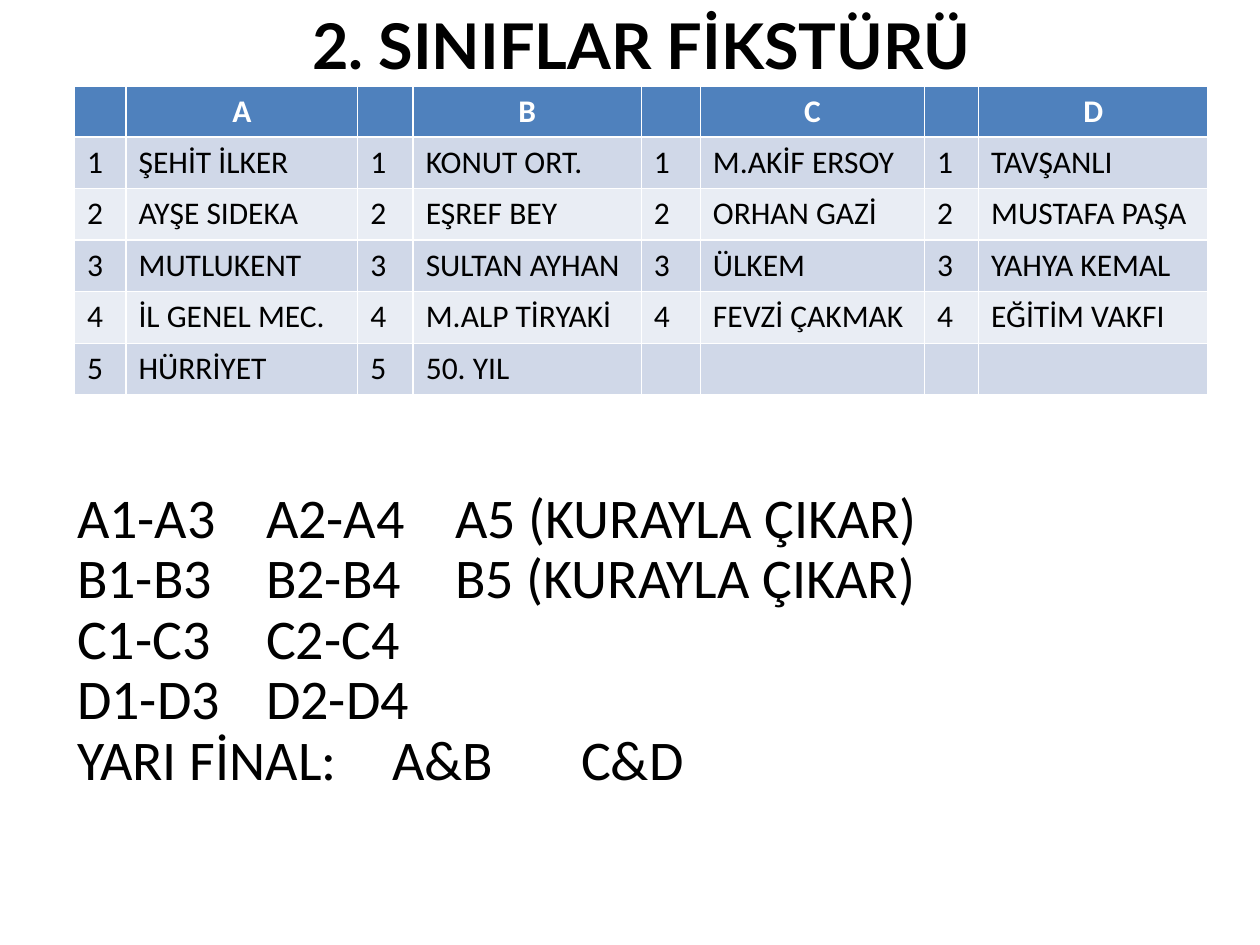
import dataclasses

import lxml.etree
import pptx
import pptx.dml.color
import pptx.enum.text
import pptx.oxml.ns
import pptx.util

Cm = pptx.util.Cm
Align = pptx.enum.text.PP_ALIGN
Anchor = pptx.enum.text.MSO_ANCHOR


@dataclasses.dataclass(frozen=True)
class Theme:
    ink: str = "000000"
    white: str = "FFFFFF"
    head: str = "4F81BD"
    bands: tuple = ("D0D8E8", "E9EDF4")
    title: int = 36
    list: int = 32
    cell: int = 18
    bold: str = "Lato"
    plain: str = "Calibri"


theme = Theme()


def color(code):
    return pptx.dml.color.RGBColor.from_string(code)


def write(para, text, size, font=theme.plain, ink=theme.ink, bold=False, align=Align.LEFT):
    para.alignment = align
    run = para.add_run()
    run.text = text
    run.font.size = pptx.util.Pt(size)
    run.font.name = font
    run.font.bold = bold
    run.font.color.rgb = color(ink)


deck = pptx.Presentation()
deck.slide_width, deck.slide_height = Cm(25.4), Cm(19.05)
slide = deck.slides.add_slide(deck.slide_layouts[1])
title, body = slide.placeholders

# Title
title.left, title.top, title.width, title.height = Cm(1.5), Cm(-0.69), Cm(22.86), Cm(3.18)
title.text_frame.vertical_anchor = Anchor.MIDDLE
write(title.text_frame.paragraphs[0], "2. SINIFLAR FİKSTÜRÜ", theme.title,
      font=theme.bold, bold=True, align=Align.CENTER)

# Groups: each fills a number column and a name column
groups = {
    "A": ["ŞEHİT İLKER", "AYŞE SIDEKA", "MUTLUKENT", "İL GENEL MEC.", "HÜRRİYET"],
    "B": ["KONUT ORT.", "EŞREF BEY", "SULTAN AYHAN", "M.ALP TİRYAKİ", "50. YIL"],
    "C": ["M.AKİF ERSOY", "ORHAN GAZİ", "ÜLKEM", "FEVZİ ÇAKMAK"],
    "D": ["TAVŞANLI", "MUSTAFA PAŞA", "YAHYA KEMAL", "EĞİTİM VAKFI"],
}
widths = [1.04, 4.67, 1.12, 4.6, 1.19, 4.52, 1.09, 4.62]
heights = [0.99] + [1.04] * 5
frame = slide.shapes.add_table(len(heights), len(widths), Cm(1.5), Cm(1.73),
                               Cm(sum(widths)), Cm(sum(heights)))
table = frame.table
for col, width in zip(table.columns, widths):
    col.width = Cm(width)
for index, (row, height) in enumerate(zip(table.rows, heights)):
    row.height = Cm(height)
    for cell in row.cells:
        cell.fill.solid()
        cell.fill.fore_color.rgb = color(theme.bands[(index - 1) % 2] if index else theme.head)

for group, (letter, names) in enumerate(groups.items()):
    left = 2 * group
    write(table.cell(0, left + 1).text_frame.paragraphs[0], letter, theme.cell,
          ink=theme.white, bold=True, align=Align.CENTER)
    for place, name in enumerate(names, 1):
        for col, text in ((left, str(place)), (left + 1, name)):
            write(table.cell(place, col).text_frame.paragraphs[0], text, theme.cell)

# Matches, lined up on tab stops
lines = [
    "A1-A3\tA2-A4\tA5 (KURAYLA ÇIKAR)",
    "B1-B3\tB2-B4\tB5 (KURAYLA ÇIKAR)",
    "C1-C3\tC2-C4",
    "D1-D3\tD2-D4",
    "YARI FİNAL:\tA&B\t\tC&D",
]
body.left, body.top, body.width, body.height = Cm(1.3), Cm(8.92), Cm(22.86), Cm(8)
text = body.text_frame
text.auto_size = pptx.enum.text.MSO_AUTO_SIZE.NONE
text.vertical_anchor = Anchor.MIDDLE
for index, line in enumerate(lines):
    para = text.add_paragraph() if index else text.paragraphs[0]
    write(para, line, theme.list)
    para.line_spacing = 0.9
    para.space_before = pptx.util.Pt(0)
    # No bullet or indent, a tab stop every 2.54 cm
    props = para._p.get_or_add_pPr()
    props.set("marL", "0")
    props.set("indent", "0")
    lxml.etree.SubElement(props, pptx.oxml.ns.qn("a:buNone"))
    tabs = lxml.etree.SubElement(props, pptx.oxml.ns.qn("a:tabLst"))
    for stop in range(1, 6):
        lxml.etree.SubElement(tabs, pptx.oxml.ns.qn("a:tab"), pos=str(Cm(2.54 * stop)), algn="l")

deck.save("out.pptx")
